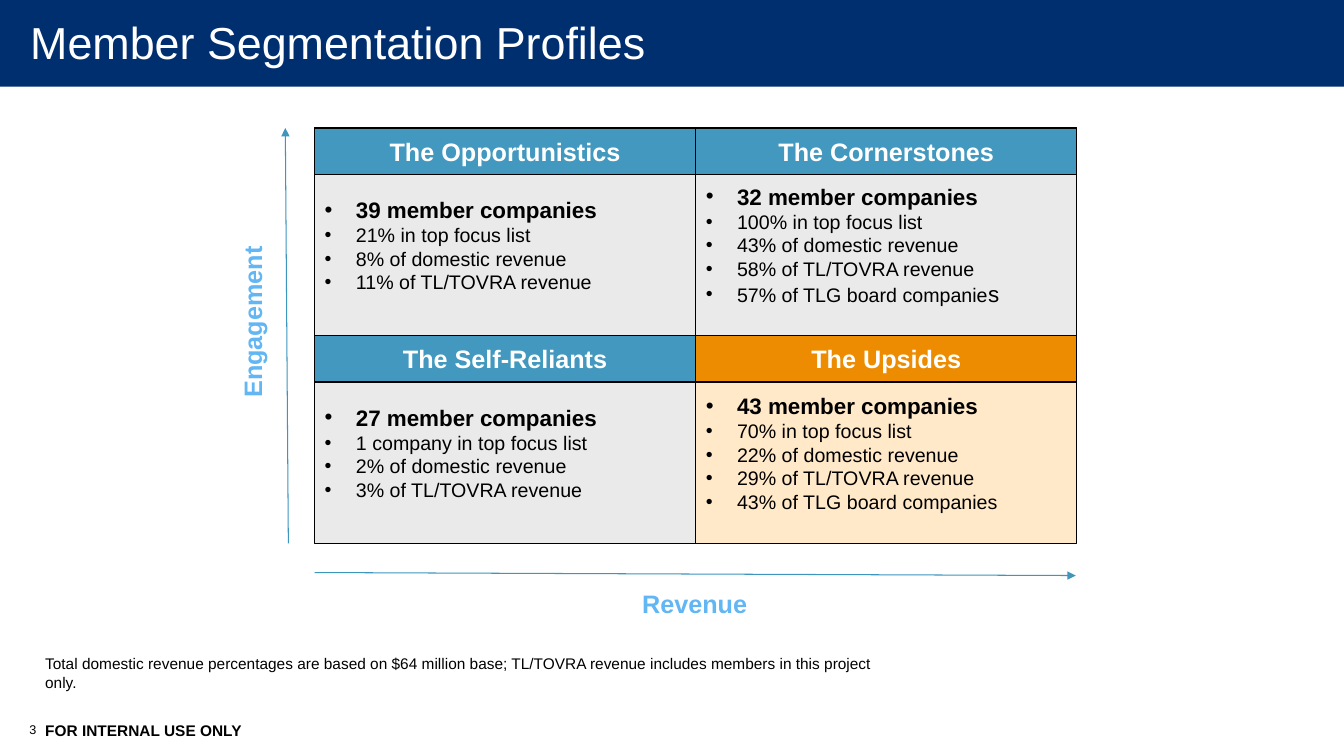
"""Build the member segmentation slide: four quadrants on engagement and revenue axes."""
import dataclasses
import typing

import lxml.etree
import pptx
import pptx.dml.color
import pptx.enum.shapes
import pptx.enum.text
import pptx.oxml.ns
import pptx.util

Inches = pptx.util.Inches
Pt = pptx.util.Pt
RGBColor = pptx.dml.color.RGBColor
ALIGN = pptx.enum.text.PP_ALIGN
ANCHOR = pptx.enum.text.MSO_ANCHOR

NAVY = RGBColor(0x00, 0x2F, 0x70)
BLUE = RGBColor(0x42, 0x98, 0xBE)
ARROW_BLUE = RGBColor(0x3E, 0x96, 0xBD)
SKY = RGBColor(0x62, 0xB6, 0xF3)
ORANGE = RGBColor(0xED, 0x8C, 0x00)
CREAM = RGBColor(0xFF, 0xE9, 0xC8)
GREY = RGBColor(0xEB, 0xEA, 0xEA)
BLACK = RGBColor(0, 0, 0)
WHITE = RGBColor(0xFF, 0xFF, 0xFF)

FONT = "Arial"
COMPARISON_LAYOUT = 4
GRID_LEFT, GRID_TOP = 3.12, 1.27
CELL_WIDTH, CELL_HEIGHT, HEADER_HEIGHT = 3.78, 2.06, 0.46
BULLET_INDENT = Inches(0.31)


@dataclasses.dataclass(frozen=True)
class Quadrant:
    """One segment, its grid place and its facts."""
    name: str
    column: int
    row: int
    placeholder: int
    headline: str
    facts: tuple[str, ...]
    header_fill: RGBColor = BLUE
    body_fill: RGBColor = GREY
    large_ending: str = ""


@dataclasses.dataclass(frozen=True)
class Label:
    """A free line of text with its place and format."""
    text: str
    frame: tuple[float, float, float, float]
    size: int
    color: RGBColor = BLACK
    bold: bool = False
    align: ALIGN = ALIGN.LEFT
    rotation: int = 0
    wrap: bool = False


@dataclasses.dataclass(frozen=True)
class Axis:
    """An arrow from start to end."""
    start: tuple[float, float]
    end: tuple[float, float]


QUADRANTS = (
    Quadrant("The Opportunistics", 0, 0, 1, "39 member companies",
             ("21% in top focus list", "8% of domestic revenue", "11% of TL/TOVRA revenue")),
    Quadrant("The Cornerstones", 1, 0, 2, "32 member companies",
             ("100% in top focus list", "43% of domestic revenue", "58% of TL/TOVRA revenue",
              "57% of TLG board companie"), large_ending="s"),
    Quadrant("The Self-Reliants", 0, 1, 3, "27 member companies",
             ("1 company in top focus list", "2% of domestic revenue", "3% of TL/TOVRA revenue")),
    Quadrant("The Upsides", 1, 1, 4, "43 member companies",
             ("70% in top focus list", "22% of domestic revenue", "29% of TL/TOVRA revenue",
              "43% of TLG board companies"), ORANGE, CREAM),
)
LABELS = (
    Label("FOR INTERNAL USE ONLY", (0.35, 7.1, 2.19, 0.29), 11, bold=True),
    Label("3", (-0.03, 7.11, 0.49, 0.4), 9, align=ALIGN.RIGHT, wrap=True),
    Label("Engagement", (1.76, 2.84, 1.79, 0.71), 18, SKY, True, ALIGN.CENTER, 270),
    Label("Revenue", (6.27, 5.79, 1.32, 0.4), 18, SKY, True),
    Label("Total domestic revenue percentages are based on $64 million base; "
          "TL/TOVRA revenue includes members in this project only.",
          (0.35, 6.44, 8.73, 0.29), 11),
)
AXES = (Axis((3.12, 5.68), (10.67, 5.71)), Axis((2.86, 5.39), (2.83, 1.27)))


def add_span(para: typing.Any, text: str, *, size: int, color: RGBColor = BLACK,
             bold: bool = False) -> None:
    """Append formatted text to a paragraph."""
    span = para.add_run()
    span.text = text
    span.font.name = FONT
    span.font.size = Pt(size)
    span.font.bold = bold
    span.font.color.rgb = color


def add_text(box: typing.Any, text: str, *, align: ALIGN = ALIGN.LEFT, bullet: bool = False,
             **style: typing.Any) -> typing.Any:
    """Write one paragraph into a shape and return it."""
    frame = box.text_frame
    para = frame.paragraphs[0] if not frame.text else frame.add_paragraph()
    para.alignment = align
    para.space_before = Pt(0)
    if bullet:
        properties = para._p.get_or_add_pPr()
        properties.set("marL", str(BULLET_INDENT))
        properties.set("indent", str(-BULLET_INDENT))
        lxml.etree.SubElement(properties, pptx.oxml.ns.qn("a:buFont"), typeface=FONT)
        lxml.etree.SubElement(properties, pptx.oxml.ns.qn("a:buChar"), char="•")
    add_span(para, text, **style)
    return para


def place(box: typing.Any, left: float, top: float, width: float, height: float) -> None:
    """Move and size a shape."""
    box.left, box.top = Inches(left), Inches(top)
    box.width, box.height = Inches(width), Inches(height)


def paint(box: typing.Any, fill: RGBColor) -> None:
    """Give a shape its fill and a thin black outline."""
    box.fill.solid()
    box.fill.fore_color.rgb = fill
    box.line.color.rgb = BLACK
    box.line.width = Pt(1)


def prepare_frame(box: typing.Any) -> None:
    """Centre the text vertically, wrap it and keep its size."""
    box.text_frame.word_wrap = True
    box.text_frame.auto_size = pptx.enum.text.MSO_AUTO_SIZE.NONE
    box.text_frame.vertical_anchor = ANCHOR.MIDDLE


def add_rectangle(page: typing.Any, left: float, top: float, width: float, height: float,
                  fill: RGBColor) -> typing.Any:
    """Add a rectangle without shadow."""
    box = page.shapes.add_shape(pptx.enum.shapes.MSO_SHAPE.RECTANGLE, Inches(left), Inches(top),
                                Inches(width), Inches(height))
    box.shadow.inherit = False
    paint(box, fill)
    return box


def add_title(page: typing.Any) -> None:
    """Fill the title and lay the navy band beneath it."""
    title = page.shapes.title
    place(title, 0, -0.07, 13.33, 0.97)
    prepare_frame(title)
    frame = title.text_frame
    frame.margin_left, frame.margin_right = Inches(0.3), Inches(0.2)
    frame.margin_top = frame.margin_bottom = 0
    add_text(title, "Member Segmentation Profiles", size=32, color=WHITE)
    band = add_rectangle(page, 0, 0, 13.33, 0.86, NAVY)
    band.line.fill.background()
    title.element.addprevious(band.element)


def add_quadrant(page: typing.Any, quadrant: Quadrant) -> None:
    """Draw a segment's fact list and its header."""
    left = GRID_LEFT + quadrant.column * CELL_WIDTH
    top = GRID_TOP + quadrant.row * CELL_HEIGHT
    body = page.placeholders[quadrant.placeholder]
    place(body, left, top, CELL_WIDTH, CELL_HEIGHT)
    paint(body, quadrant.body_fill)
    prepare_frame(body)
    body.text_frame.margin_top = Inches(0.31)
    para = add_text(body, quadrant.headline, bullet=True, size=16, bold=True)
    for fact in quadrant.facts:
        para = add_text(body, fact, bullet=True, size=14)
    if quadrant.large_ending:
        add_span(para, quadrant.large_ending, size=16)
    header = add_rectangle(page, left, top, CELL_WIDTH, HEADER_HEIGHT, quadrant.header_fill)
    prepare_frame(header)
    add_text(header, quadrant.name, align=ALIGN.CENTER, size=18, color=WHITE, bold=True)


def add_label(page: typing.Any, label: Label) -> None:
    """Add a text box."""
    box = page.shapes.add_textbox(*(Inches(length) for length in label.frame))
    box.rotation = label.rotation
    box.text_frame.word_wrap = label.wrap
    add_text(box, label.text, align=label.align, size=label.size, color=label.color,
             bold=label.bold)


def add_axis(page: typing.Any, axis: Axis) -> None:
    """Add an arrow with a triangle at its end."""
    arrow = page.shapes.add_connector(pptx.enum.shapes.MSO_CONNECTOR.STRAIGHT,
                                      *(Inches(length) for length in axis.start + axis.end))
    arrow.line.color.rgb = ARROW_BLUE
    arrow.line.width = Pt(0.75)
    lxml.etree.SubElement(arrow.line._get_or_add_ln(), pptx.oxml.ns.qn("a:tailEnd"),
                          type="triangle")
    lxml.etree.SubElement(arrow.element.spPr, pptx.oxml.ns.qn("a:effectLst"))


def main() -> None:
    """Build and save the deck."""
    deck = pptx.Presentation()
    deck.slide_width, deck.slide_height = Inches(13.33), Inches(7.5)
    page = deck.slides.add_slide(deck.slide_layouts[COMPARISON_LAYOUT])
    add_title(page)
    for quadrant in QUADRANTS:
        add_quadrant(page, quadrant)
    for axis in AXES:
        add_axis(page, axis)
    for label in LABELS:
        add_label(page, label)
    deck.save("out.pptx")


if __name__ == "__main__":
    main()
